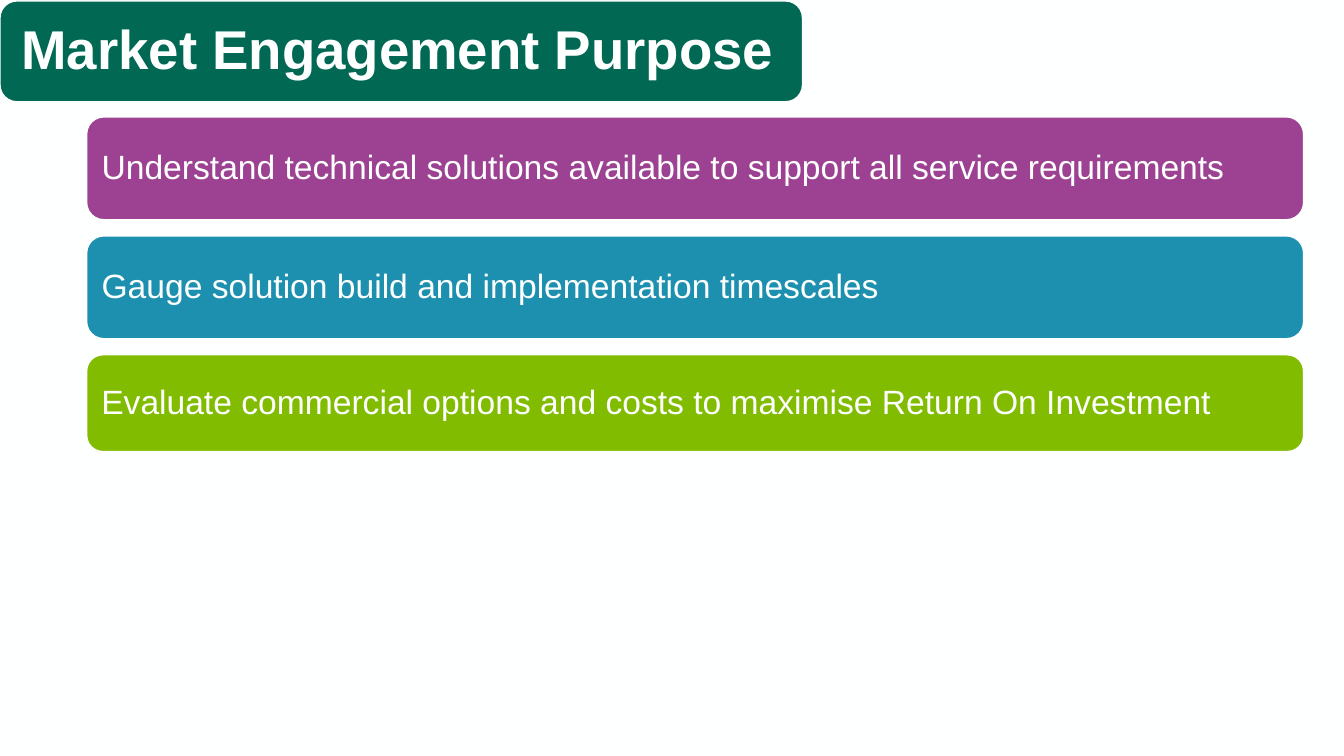
from pptx import Presentation
from pptx.dml.color import RGBColor
from pptx.enum import shapes, text
from pptx.util import Inches, Pt

COLORS = {
    "white": "FEFFFF",
    "green": "006853",
    "purple": "9D4292",
    "blue": "1E90AF",
    "lime": "81BC00",
}
PURPOSES = [
    ("Understand technical solutions available to support all service requirements", "purple", 1.02),
    ("Gauge solution build and implementation timescales", "blue", 1.02),
    ("Evaluate commercial options and costs to maximise Return On Investment", "lime", 0.96),
]
WHITE = RGBColor.from_string(COLORS["white"])


def add_bar(left, top, width, height, color):
    bar = slide.shapes.add_shape(
        shapes.MSO_SHAPE.ROUNDED_RECTANGLE,
        Inches(left), Inches(top), Inches(width), Inches(height))
    bar.shadow.inherit = False
    bar.fill.solid()
    bar.fill.fore_color.rgb = RGBColor.from_string(COLORS[color])
    bar.line.color.rgb = WHITE
    bar.line.width = Pt(1)
    return bar


def write(shape, wording, size, inset, bold=False):
    frame = shape.text_frame
    frame.text = wording
    frame.word_wrap = True
    frame.auto_size = text.MSO_AUTO_SIZE.NONE
    frame.vertical_anchor = text.MSO_ANCHOR.MIDDLE
    frame.margin_left = frame.margin_right = Inches(inset)
    frame.margin_top = frame.margin_bottom = Inches(inset)
    paragraph = frame.paragraphs[0]
    paragraph.alignment = text.PP_ALIGN.LEFT
    paragraph.line_spacing = 0.9
    font = paragraph.runs[0].font
    font.name = "Arial"
    font.size = Pt(size)
    font.bold = bold
    font.color.rgb = WHITE


prs = Presentation()
prs.slide_width = Inches(13.33)
prs.slide_height = Inches(7.5)
slide = prs.slides.add_slide(prs.slide_layouts[5])
slide.background.fill.solid()
slide.background.fill.fore_color.rgb = WHITE

title = slide.shapes.title
title.left, title.top = Inches(0.05), Inches(0.06)
title.width, title.height = Inches(7.86), Inches(0.91)
write(title, "Market Engagement Purpose", 39, 0.16, bold=True)
title_bar = add_bar(0, 0.01, 7.96, 1, "green")
title.element.addprevious(title_bar.element)

for row, (purpose, color, height) in enumerate(PURPOSES):
    purpose_bar = add_bar(0.86, 1.16 + row * 1.18, 12.07, height, color)
    write(purpose_bar, purpose, 24, 0.1)

prs.save("out.pptx")
